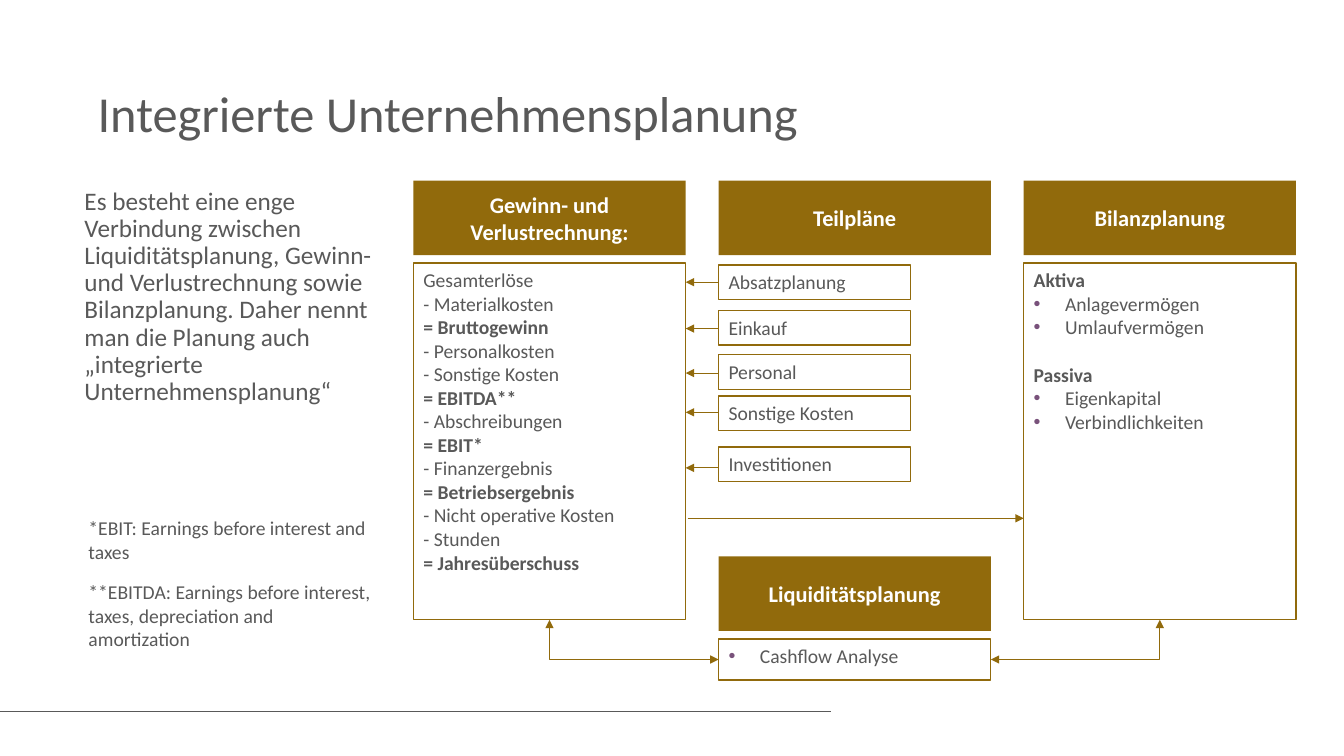
from lxml.etree import SubElement
from pptx import Presentation
from pptx.dml.color import RGBColor
from pptx.enum.shapes import MSO_CONNECTOR, MSO_SHAPE
from pptx.enum.text import MSO_ANCHOR, PP_ALIGN
from pptx.oxml.ns import qn
from pptx.util import Cm, Pt

COLORS = {"text": "595959", "gold": "916A0C", "white": "FFFFFF", "bullet": "79527B"}

presentation = Presentation()
presentation.slide_width, presentation.slide_height = Cm(33.87), Cm(19.05)
slide = presentation.slides.add_slide(presentation.slide_layouts[6])


def add_text(lines, left, top, width, height, size=14, color="text", fill=None, outline=None,
             bold=False, align=PP_ALIGN.LEFT, anchor=MSO_ANCHOR.TOP, line_spacing=1.0, gap=0):
    """Lines are strings or (text, style) pairs with the style bold, section or bullet."""
    place = Cm(left), Cm(top), Cm(width), Cm(height)
    if fill:
        shape = slide.shapes.add_shape(MSO_SHAPE.RECTANGLE, *place)
        shape.shadow.inherit = False
        shape.fill.solid()
        shape.fill.fore_color.rgb = RGBColor.from_string(COLORS[fill])
        if outline:
            shape.line.color.rgb = RGBColor.from_string(COLORS[outline])
            shape.line.width = Pt(1)
        else:
            shape.line.fill.background()
    else:
        shape = slide.shapes.add_textbox(*place)
    frame = shape.text_frame
    frame.word_wrap = True
    frame.vertical_anchor = anchor
    for index, line in enumerate(lines):
        text, style = (line, "") if isinstance(line, str) else line
        paragraph = frame.paragraphs[0] if index == 0 else frame.add_paragraph()
        paragraph.text = text
        paragraph.alignment = align
        paragraph.line_spacing = line_spacing
        if index:
            paragraph.space_before = Pt(17 if style == "section" else gap)
        if style == "bullet":
            properties = paragraph._p.get_or_add_pPr()
            properties.set("marL", str(Cm(0.79)))
            properties.set("indent", str(-Cm(0.79)))
            bullet_color = SubElement(properties, qn("a:buClr"))
            SubElement(bullet_color, qn("a:srgbClr"), val=COLORS["bullet"])
            SubElement(properties, qn("a:buFont"), typeface="Arial")
            SubElement(properties, qn("a:buChar"), char="•")
        font = paragraph.runs[0].font
        font.name, font.size = "Calibri", Pt(size)
        font.bold = bold or style in ("bold", "section")
        font.color.rgb = RGBColor.from_string(COLORS[color])
    return shape


def add_line(start, end, color="gold", width=0.75, arrows=("tailEnd",), kind=MSO_CONNECTOR.STRAIGHT):
    connector = slide.shapes.add_connector(kind, *(Cm(value) for value in (*start, *end)))
    connector.line.color.rgb = RGBColor.from_string(COLORS[color])
    connector.line.width = Pt(width)
    for arrow in arrows:
        SubElement(connector.line._get_or_add_ln(), qn(f"a:{arrow}"), type="triangle")
    SubElement(connector._element.spPr, qn("a:effectLst"))
    return connector


# Footer rule, title and explanations
add_line((0, 17.93), (20.93, 17.93), color="text", width=1, arrows=())
add_text(["Integrierte Unternehmensplanung"], 2.21, 2.11, 29.49, 2.24, size=36, line_spacing=0.9)
add_text(["Es besteht eine enge Verbindung zwischen Liquiditätsplanung, Gewinn- und "
          "Verlustrechnung sowie Bilanzplanung. Daher nennt man die Planung auch "
          "„integrierte Unternehmensplanung“"],
         1.88, 4.62, 7.85, 7.19, size=18, line_spacing=0.9)
add_text(["*EBIT: Earnings before interest and taxes",
          "**EBITDA: Earnings before interest, taxes, depreciation and amortization"],
         1.98, 12.88, 7.62, 4.7, gap=12)

# Column headers
COLUMN_WIDTH = 6.86
profit_left, plans_left, balance_left = (10.42 + 7.69 * column for column in range(3))
for header, left, top in [("Gewinn- und Verlustrechnung:", profit_left, 4.55),
                          ("Teilpläne", plans_left, 4.55),
                          ("Bilanzplanung", balance_left, 4.55),
                          ("Liquiditätsplanung", plans_left, 14.02)]:
    add_text([header], left, top, COLUMN_WIDTH, 1.88, size=16, color="white", fill="gold",
             bold=True, align=PP_ALIGN.CENTER, anchor=MSO_ANCHOR.MIDDLE)

# Content boxes
box_format = {"fill": "white", "outline": "gold"}
profit_box = add_text(
    ["Gesamterlöse", "- Materialkosten", ("= Bruttogewinn", "bold"),
     "- Personalkosten", "- Sonstige Kosten", ("= EBITDA**", "bold"),
     "- Abschreibungen", ("= EBIT*", "bold"),
     "- Finanzergebnis", ("= Betriebsergebnis", "bold"),
     "- Nicht operative Kosten", "- Stunden", ("= Jahresüberschuss", "bold")],
    profit_left, 6.63, COLUMN_WIDTH, 8.99, **box_format)
balance_box = add_text(
    [("Aktiva", "bold"), ("Anlagevermögen", "bullet"), ("Umlaufvermögen", "bullet"),
     ("Passiva", "section"), ("Eigenkapital", "bullet"), ("Verbindlichkeiten", "bullet")],
    balance_left, 6.63, COLUMN_WIDTH, 8.99, **box_format)
cashflow_box = add_text([("Cashflow Analyse", "bullet")],
                        plans_left, 16.1, COLUMN_WIDTH, 1.04, **box_format)

# Partial plans, each feeding the profit and loss account
profit_right = profit_left + COLUMN_WIDTH
for plan, top, arrow_y in [("Absatzplanung", 6.68, 7.11), ("Einkauf", 7.83, 8.28),
                           ("Personal", 8.94, 9.4), ("Sonstige Kosten", 9.98, 10.39),
                           ("Investitionen", 11.26, 11.79)]:
    add_text([plan], plans_left, top, 4.83, 0.87, **box_format)
    add_line((plans_left, arrow_y), (profit_right, arrow_y))

# Links between the main plans
add_line((profit_right + 0.05, 13.06), (balance_left, 13.06))
cashflow_y, box_bottom = 16.62, 15.62
for box, left, cashflow_x, side in [(profit_box, profit_left, plans_left, 1),
                                    (balance_box, balance_left, plans_left + COLUMN_WIDTH, 3)]:
    elbow = add_line((cashflow_x, cashflow_y), (left + COLUMN_WIDTH / 2, box_bottom),
                     arrows=("headEnd", "tailEnd"), kind=MSO_CONNECTOR.ELBOW)
    elbow._element.spPr.find(qn("a:prstGeom")).set("prst", "bentConnector2")
    elbow.begin_connect(cashflow_box, side)
    elbow.end_connect(box, 2)

presentation.save("out.pptx")
